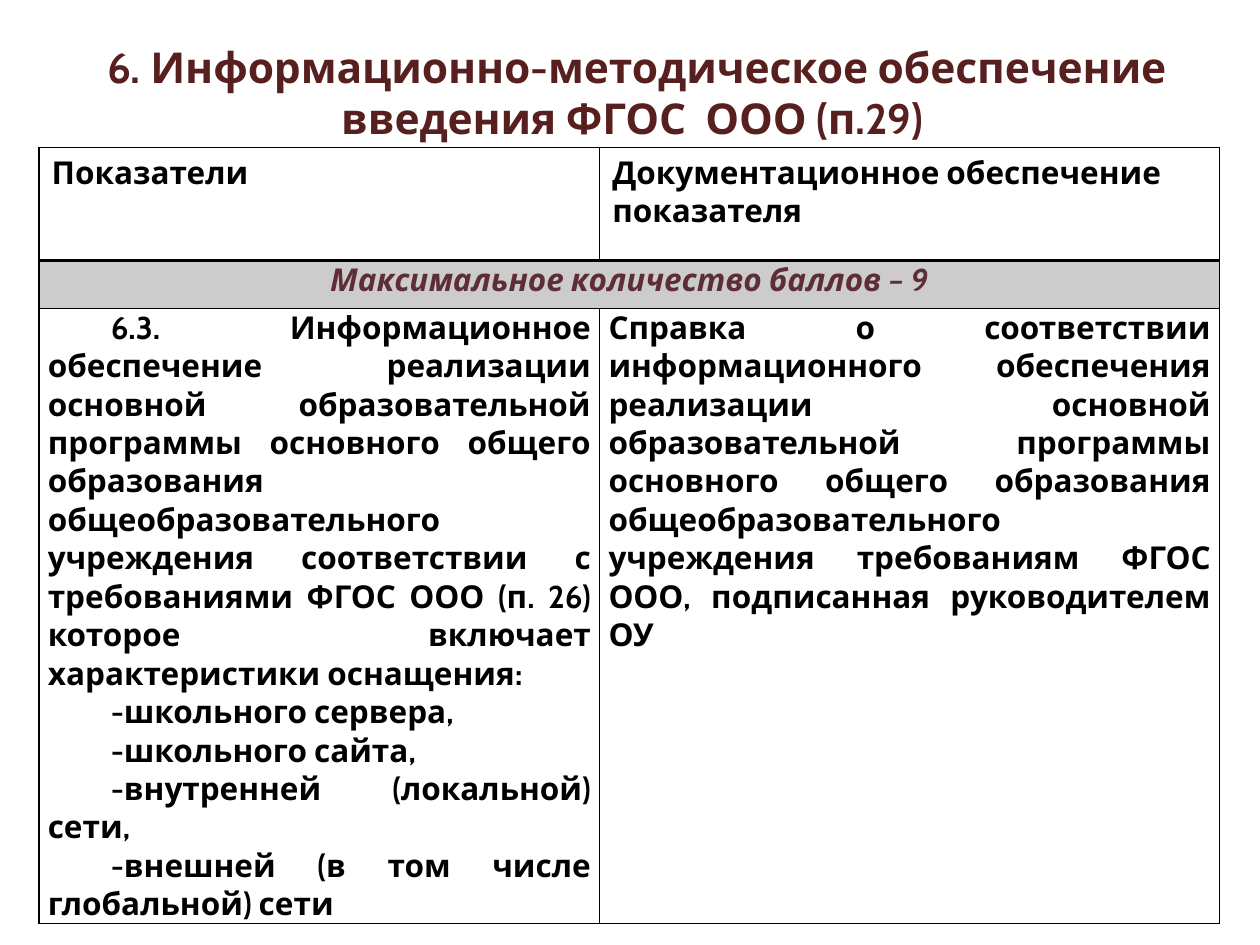
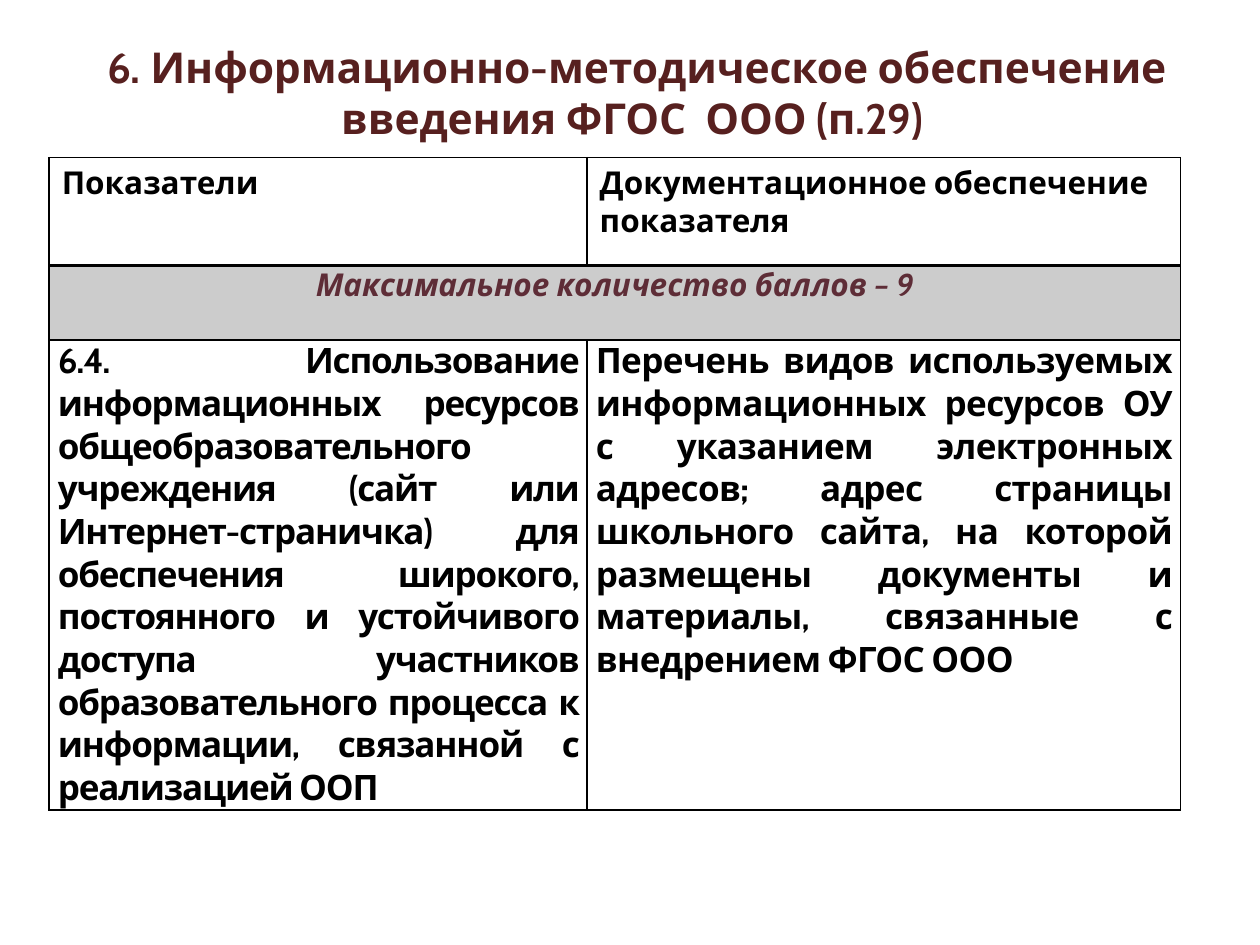
from lxml.etree import SubElement
from pptx import Presentation
from pptx.dml.color import RGBColor
from pptx.enum.text import MSO_ANCHOR, PP_ALIGN
from pptx.oxml.ns import qn
from pptx.util import Inches, Pt

FONT = "Cabin"
BLACK = "000000"
TITLE_COLOR = "57201F"
SCORE_COLOR = "5E2D37"
BAND_COLOR = "CCCCCC"
TITLE = "6. Информационно-методическое обеспечение введения ФГОС  ООО (п.29) "
HEADERS = ["Показатели", "Документационное обеспечение показателя"]
MAX_SCORE = "Максимальное количество баллов – 9"

EQUIPMENT_INDICATOR = [
    "6.3. Информационное обеспечение реализации основной образовательной "
    "программы основного общего образования общеобразовательного учреждения "
    "соответствии с требованиями ФГОС ООО (п. 26) которое включает "
    "характеристики оснащения:",
    "-школьного сервера, ",
    "-школьного сайта, ",
    "-внутренней (локальной) сети, ",
    "-внешней (в том числе глобальной) сети ",
]
EQUIPMENT_DOCUMENT = [
    "Справка о соответствии информационного обеспечения реализации основной "
    "образовательной программы основного общего образования "
    "общеобразовательного учреждения требованиям ФГОС ООО, подписанная "
    "руководителем ОУ",
]
RESOURCES_INDICATOR = [
    "6.4. Использование информационных ресурсов общеобразовательного "
    "учреждения (сайт или Интернет-страничка) для обеспечения широкого, "
    "постоянного и устойчивого доступа участников образовательного процесса "
    "к информации, связанной с реализацией ООП",
]
RESOURCES_DOCUMENT = [
    "Перечень видов используемых информационных ресурсов ОУ с указанием "
    "электронных адресов; адрес страницы школьного сайта, на которой "
    "размещены документы и материалы, связанные с внедрением ФГОС ООО",
]


def rgb(color):
    """Turn a hex string into a colour."""
    return RGBColor.from_string(color)


def write(frame, paragraphs, size, color=BLACK, align=PP_ALIGN.LEFT,
          italic=False, indent=0, spacing=0):
    """Fill a text frame with bold paragraphs of one style."""
    frame.text = "\n".join(paragraphs)
    for paragraph in frame.paragraphs:
        paragraph.alignment = align
        if indent:
            paragraph._p.get_or_add_pPr().set("indent", str(Inches(indent)))
        for run in paragraph.runs:
            font = run.font
            font.name, font.size = FONT, Pt(size)
            font.bold, font.italic = True, italic
            font.color.rgb = rgb(color)
            if spacing:
                run._r.get_or_add_rPr().set("spc", str(round(spacing * 100)))


def style_cell(cell, top=1, bottom=1, fill=None):
    """Draw the borders of a cell and set its fill."""
    properties = cell._tc.get_or_add_tcPr()
    for side, width in zip("LRTB", (1, 1, top, bottom)):
        border = SubElement(properties, qn(f"a:ln{side}"), w=str(Pt(width)))
        solid = SubElement(border, qn("a:solidFill"))
        SubElement(solid, qn("a:srgbClr"), val=BLACK)
    if fill:
        cell.fill.solid()
        cell.fill.fore_color.rgb = rgb(fill)
    else:
        cell.fill.background()


def tighten(cell):
    """Give a cell narrow side margins and none above or below."""
    cell.margin_left = cell.margin_right = Inches(0.07)
    cell.margin_top = cell.margin_bottom = 0


def add_title(slide):
    """Add the section title shared by the slides."""
    box = slide.shapes.add_textbox(
        Inches(0.5), Inches(0.32), Inches(9.11), Inches(0.82))
    frame = box.text_frame
    frame.word_wrap = True
    frame.margin_top = frame.margin_bottom = 0
    frame.vertical_anchor = MSO_ANCHOR.MIDDLE
    write(frame, [TITLE], 24.3, TITLE_COLOR, PP_ALIGN.CENTER)


def add_indicator_table(slide, left, top, widths, heights, bodies, size,
                        indents=(0, 0), spacings=(0, 0)):
    """Add a table of headers, score band, indicator and its document."""
    table = slide.shapes.add_table(
        3, 2, Inches(left), Inches(top),
        Inches(sum(widths)), Inches(sum(heights))).table
    table.first_row = table.horz_banding = False
    for column, width in zip(table.columns, widths):
        column.width = Inches(width)
    for row, height in zip(table.rows, heights):
        row.height = Inches(height)

    for index, header in enumerate(HEADERS):
        heading, score, body = (table.cell(row, index) for row in range(3))
        write(heading.text_frame, [header], 18)
        style_cell(heading, bottom=2)
        style_cell(score, top=2, fill=BAND_COLOR)
        write(body.text_frame, bodies[index], size, align=PP_ALIGN.JUSTIFY,
              indent=indents[index], spacing=spacings[index])
        tighten(body)
        style_cell(body)

    band = table.cell(1, 0)
    band.merge(table.cell(1, 1))
    tighten(band)
    write(band.text_frame, [MAX_SCORE], 18, SCORE_COLOR, PP_ALIGN.CENTER,
          italic=True)


def main():
    """Build both slides and save the presentation."""
    deck = Presentation()
    deck.slide_width, deck.slide_height = Inches(10), Inches(7.5)
    equipment, resources = (
        deck.slides.add_slide(deck.slide_layouts[6]) for _ in range(2))
    for slide in (equipment, resources):
        add_title(slide)
    add_indicator_table(
        equipment, 0.31, 1.17, (4.45, 4.92), (0.9, 0.38, 4.88),
        (EQUIPMENT_INDICATOR, EQUIPMENT_DOCUMENT), 18, indents=(0.5, 0))
    add_indicator_table(
        resources, 0.39, 1.25, (4.27, 4.71), (0.86, 0.59, 3.73),
        (RESOURCES_INDICATOR, RESOURCES_DOCUMENT), 20, spacings=(-0.7, -0.4))
    deck.save("out.pptx")


if __name__ == "__main__":
    main()
